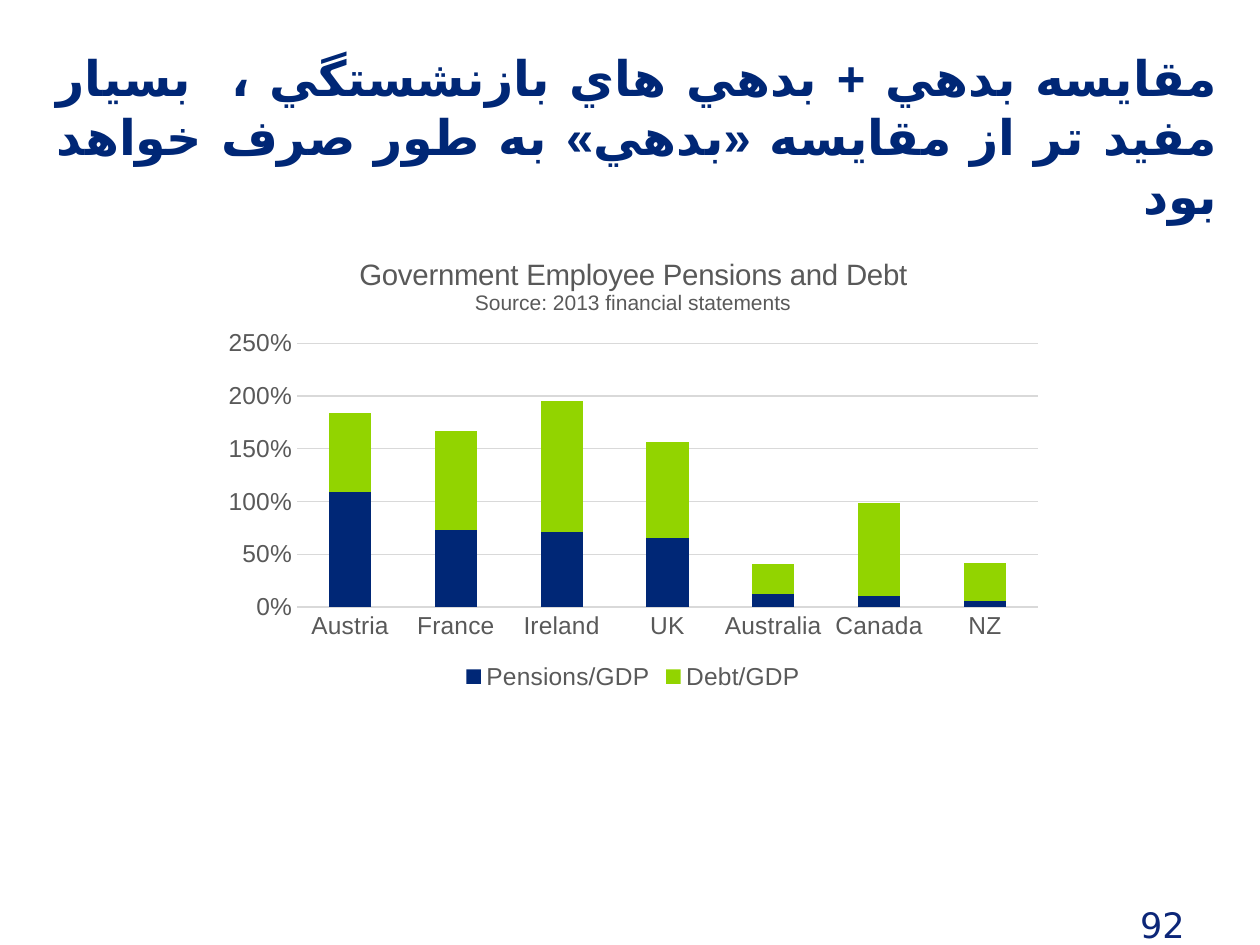
from lxml.etree import SubElement
from pptx import Presentation
from pptx.chart.data import CategoryChartData
from pptx.dml.color import RGBColor
from pptx.enum.chart import XL_CHART_TYPE, XL_LEGEND_POSITION, XL_TICK_MARK
from pptx.enum.text import PP_ALIGN
from pptx.oxml.ns import qn
from pptx.util import Pt

NAVY = RGBColor(0x00, 0x27, 0x76)
GREEN = RGBColor(0x92, 0xD4, 0x00)
PAGE_BLUE = RGBColor(0x0C, 0x26, 0x78)
GREY = RGBColor(0x59, 0x59, 0x59)
LIGHT_GREY = RGBColor(0xD9, 0xD9, 0xD9)


def set_font(font, size, color, name="Arial", bold=False):
    for key, value in {"size": Pt(size), "name": name, "bold": bold}.items():
        setattr(font, key, value)
    font.color.rgb = color


def add_text(page, left, top, width, height, text):
    """Add a wrapping text box and return its frame, paragraph and span."""
    box = page.shapes.add_textbox(Pt(left), Pt(top), Pt(width), Pt(height))
    frame = box.text_frame
    frame.word_wrap = True
    para = frame.paragraphs[0]
    span = para.add_run()
    span.text = text
    return frame, para, span


deck = Presentation()
deck.slide_width, deck.slide_height = Pt(720), Pt(540)
page = deck.slides.add_slide(deck.slide_layouts[6])

# Page number
frame, para, span = add_text(page, 644.4, 512.64, 62.64, 14.4, "92")
set_font(span.font, 20, PAGE_BLUE, "DejaVu Sans")

# Right-to-left heading
frame, para, span = add_text(
    page, 32.4, 27.36, 663.12, 49.68,
    "مقايسه بدهي + بدهي هاي بازنشستگي ،  بسيار مفيد تر از مقايسه «بدهي» به طور صرف خواهد بود")
for side in ("left", "top", "right", "bottom"):
    setattr(frame, f"margin_{side}", 0)
para.alignment = PP_ALIGN.JUSTIFY
para._p.get_or_add_pPr().set("rtl", "1")
set_font(span.font, 28, NAVY, bold=True)
properties = span._r.get_or_add_rPr()
properties.set("lang", "fa-IR")
SubElement(properties, qn("a:cs")).set("typeface", "Arial")

# Stacked column chart
data = CategoryChartData(number_format="0%")
data.categories = ["Austria", "France", "Ireland", "UK", "Australia", "Canada", "NZ"]
data.add_series("Pensions/GDP", [1.09, 0.73, 0.71, 0.65, 0.12, 0.10, 0.06])
data.add_series("Debt/GDP", [0.75, 0.94, 1.24, 0.91, 0.29, 0.89, 0.36])
chart = page.shapes.add_chart(
    XL_CHART_TYPE.COLUMN_STACKED, Pt(120.96), Pt(135.36), Pt(481.68), Pt(262.08), data).chart
set_font(chart.font, 14, GREY)

chart.has_title = True
title = chart.chart_title
title.include_in_layout = False
title_frame = title.text_frame
title_lines = [("Government Employee Pensions and Debt", 16.8),
               ("Source: 2013 financial statements", 12)]
for index, (text, size) in enumerate(title_lines):
    para = title_frame.add_paragraph() if index else title_frame.paragraphs[0]
    span = para.add_run()
    span.text = text
    set_font(span.font, size, GREY)

plot = chart.plots[0]
plot.gap_width, plot.overlap = 150, 100
plot.vary_by_categories = False
for series, color in zip(plot.series, (NAVY, GREEN)):
    series.format.fill.solid()
    series.format.fill.fore_color.rgb = color
    series.invert_if_negative = False

categories, values = chart.category_axis, chart.value_axis
for axis in (categories, values):
    axis.major_tick_mark = axis.minor_tick_mark = XL_TICK_MARK.NONE
    set_font(axis.tick_labels.font, 14, GREY)
values.minimum_scale, values.maximum_scale, values.major_unit = 0, 2.5, 0.5
values.tick_labels.number_format = "0%"
values.tick_labels.number_format_is_linked = False
values.format.line.fill.background()
for line in (categories.format.line, values.major_gridlines.format.line):
    line.color.rgb = LIGHT_GREY
    line.width = Pt(0.75)

chart.has_legend = True
chart.legend.position = XL_LEGEND_POSITION.BOTTOM
chart.legend.include_in_layout = False
set_font(chart.legend.font, 14, GREY)

deck.save("out.pptx")
